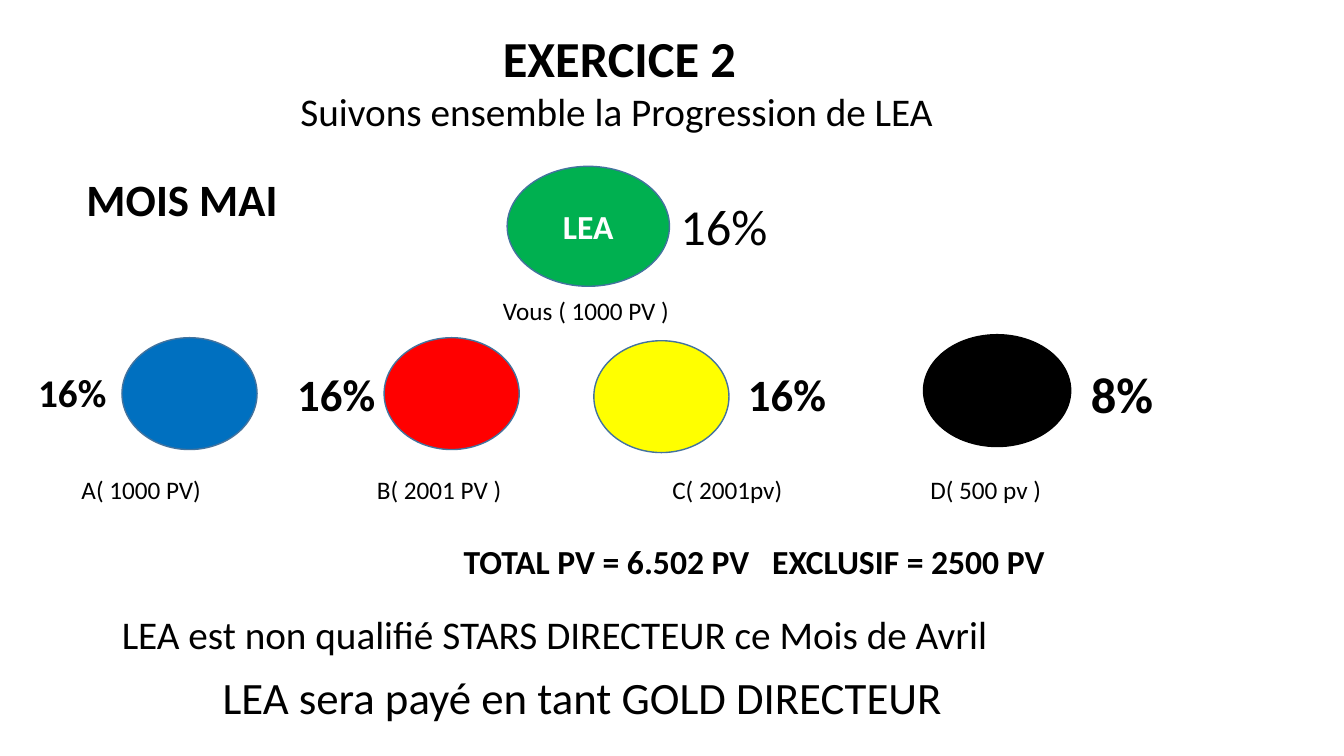
"""Build the slide for exercise 2, following the monthly progression of LEA."""
from pptx import Presentation
from pptx.dml.color import RGBColor
from pptx.enum.shapes import MSO_SHAPE
from pptx.enum.text import MSO_ANCHOR, PP_ALIGN
from pptx.util import Inches, Pt

OVAL = MSO_SHAPE.OVAL
MIDDLE = MSO_ANCHOR.MIDDLE
CENTER = PP_ALIGN.CENTER

FONT = "Calibri"
BLACK = RGBColor(0x00, 0x00, 0x00)
WHITE = RGBColor(0xFF, 0xFF, 0xFF)
GREEN = RGBColor(0x00, 0xB0, 0x50)
BLUE = RGBColor(0x00, 0x70, 0xC0)
RED = RGBColor(0xFF, 0x00, 0x00)
YELLOW = RGBColor(0xFF, 0xFF, 0x00)
OUTLINE = RGBColor(0x43, 0x73, 0x9E)

# text, left, top, width, size, bold
LINES = [
    ("EXERCICE 2", 4.89, 0.22, 4.87, 36, True),
    ("Suivons ensemble la Progression de LEA", 2.88, 0.82, 9.38, 28, False),
    ("MOIS MAI", 0.76, 1.65, 2.94, 32, True),
    ("Vous ( 1000 PV )", 4.89, 2.88, 3.58, 18, False),
    ("TOTAL PV = 6.502 PV", 4.5, 5.32, 3.06, 24, True),
    ("EXCLUSIF = 2500 PV", 7.56, 5.32, 3.91, 24, True),
    ("LEA est non qualifié STARS DIRECTEUR ce Mois de Avril", 1.11, 6.01, 11.54, 28, False),
    ("LEA sera payé en tant GOLD DIRECTEUR", 2.11, 6.59, 8.73, 32, False),
]

# name, left, top, width, height, fill, outline
MEMBERS = [
    ("LEA", 5.03, 1.65, 1.61, 1.19, GREEN, OUTLINE),
    ("", 1.21, 3.35, 1.34, 1.11, BLUE, OUTLINE),
    ("", 3.81, 3.35, 1.34, 1.11, RED, OUTLINE),
    ("", 5.89, 3.38, 1.34, 1.11, YELLOW, OUTLINE),
    ("", 9.16, 3.32, 1.46, 1.11, BLACK, BLACK),
]

# text, left, top, width, size, bold
RATES = [
    ("16%", 6.65, 1.89, 1.76, 36, False),
    ("16%", 0.28, 3.6, 1.21, 28, True),
    ("16%", 2.85, 3.59, 1.26, 32, True),
    ("16%", 7.32, 3.59, 1.26, 32, True),
    ("8%", 10.72, 3.55, 1.35, 36, True),
]

# text, left
VOLUMES = [
    ("A( 1000 PV)", 0.71),
    ("B( 2001 PV )", 3.64),
    ("C( 2001pv)", 6.57),
    ("D( 500 pv )", 9.13),
]
VOLUME_TOP, VOLUME_WIDTH, VOLUME_SIZE = 4.66, 2.1, 18


def write(frame, text, size, bold, color):
    """Put one styled line in a text frame and return its paragraph."""
    paragraph = frame.paragraphs[0]
    paragraph.text = text
    paragraph.font.name = FONT
    paragraph.font.size = Pt(size)
    paragraph.font.bold = bold
    paragraph.font.color.rgb = color
    return paragraph


def add_line(page, text, left, top, width, size, bold):
    """Add a one-line text box whose height follows its font size."""
    height = size * 1.2 / 72 + 0.1
    box = page.shapes.add_textbox(
        Inches(left), Inches(top), Inches(width), Inches(height))
    box.text_frame.word_wrap = True
    write(box.text_frame, text, size, bold, BLACK)


def add_member(page, name, left, top, width, height, fill, outline):
    """Add the oval of one team member."""
    oval = page.shapes.add_shape(
        OVAL, Inches(left), Inches(top), Inches(width), Inches(height))
    oval.shadow.inherit = False
    oval.fill.solid()
    oval.fill.fore_color.rgb = fill
    oval.line.color.rgb = outline
    oval.line.width = Pt(1)
    if name:
        oval.text_frame.vertical_anchor = MIDDLE
        write(oval.text_frame, name, 24, True, WHITE).alignment = CENTER


def main():
    """Assemble and save the deck."""
    deck = Presentation()
    deck.slide_width, deck.slide_height = Inches(13.33), Inches(7.5)
    page = deck.slides.add_slide(deck.slide_layouts[6])
    for member in MEMBERS:
        add_member(page, *member)
    for line in LINES + RATES:
        add_line(page, *line)
    for text, left in VOLUMES:
        add_line(page, text, left, VOLUME_TOP, VOLUME_WIDTH, VOLUME_SIZE, False)
    deck.save("out.pptx")


if __name__ == "__main__":
    main()
